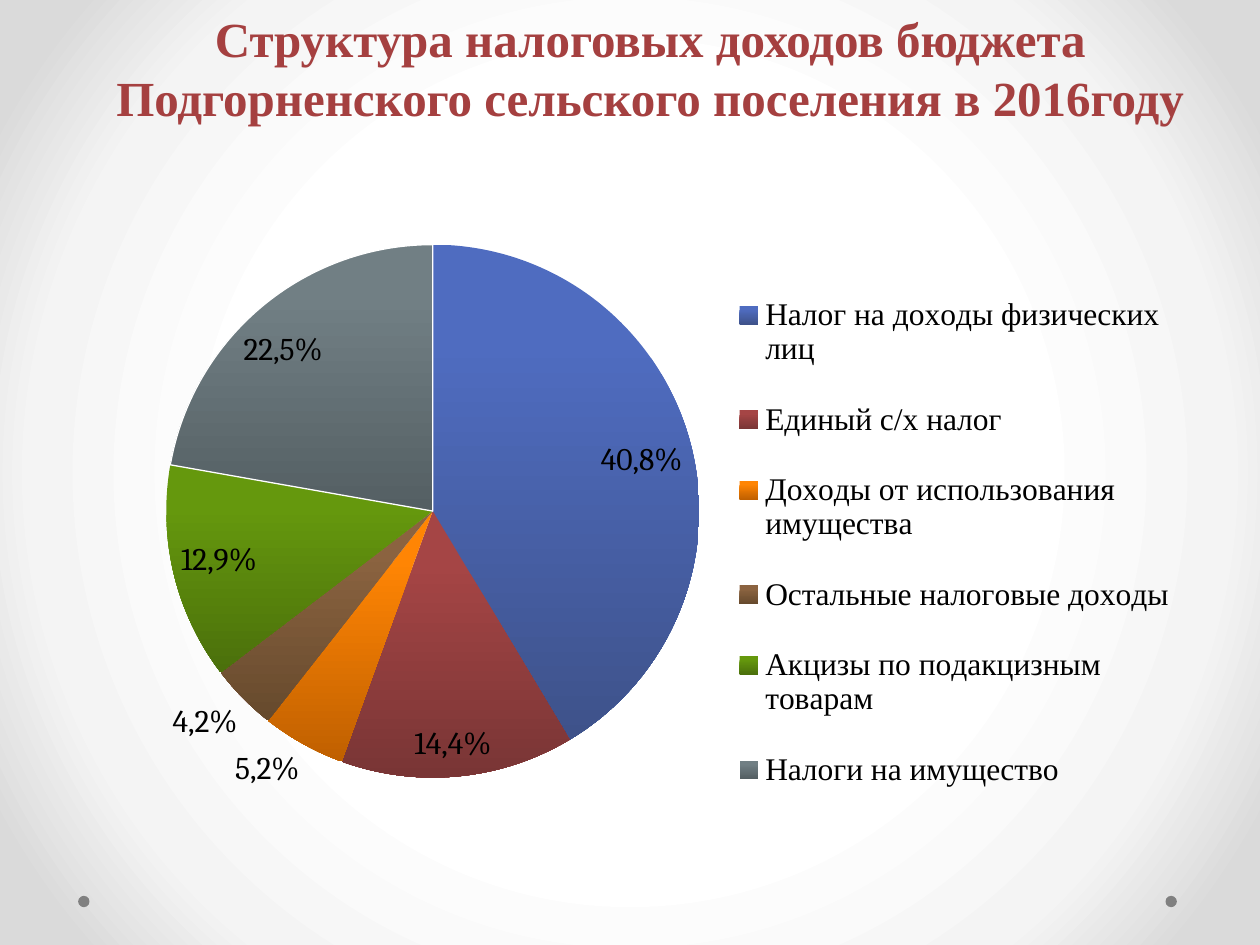
import pptx
import pptx.util
import pptx.oxml
import pptx.chart.data
import pptx.dml.color
import pptx.enum.chart
import pptx.enum.shapes
import pptx.enum.text

Inches, Pt = pptx.util.Inches, pptx.util.Pt
Place = pptx.enum.chart.XL_LABEL_POSITION
NS = "http://schemas.openxmlformats.org/"
COLORS = {"title": "A54040", "dot": "808080", "text": "000000", "edge": "FFFFFF"}
GLOW = {50: "FFFFFF", 76: "F4F4F4", 92: "DADADA"}
IN, OUT = Place.INSIDE_END, Place.OUTSIDE_END

# name, share, label, top colour, bottom colour, label place, label shift
SLICES = [
    ("Налог на доходы физических лиц", 41, "40,8%", "4F6CC0", "3E528A", IN, None),
    ("Единый с/х налог", 14, "14,4%", "A54545", "793535", IN, (0.03, -0.01)),
    ("Доходы от использования имущества", 5, "5,2%", "FF8504", "C06000", OUT, None),
    ("Остальные налоговые доходы", 4, "4,2%", "8B6340", "664A2D", OUT, None),
    ("Акцизы по подакцизным товарам", 13, "12,9%", "65980D", "4B700C", IN, (0, 0.01)),
    ("Налоги на имущество", 22, "22,5%", "717F84", "545F63", IN, (-0.02, 0.03)),
]


def rgb(code):
    return pptx.dml.color.RGBColor.from_string(code)


def layout(**parts):
    tags = "".join(f'<c:{tag} val="{val}"/>' for tag, val in parts.items())
    return pptx.oxml.parse_xml(f'<c:layout xmlns:c="{NS}drawingml/2006/chart">'
                               f'<c:manualLayout>{tags}</c:manualLayout></c:layout>')


deck = pptx.Presentation()
deck.slide_width, deck.slide_height = Inches(10), Inches(7.5)
slide = deck.slides.add_slide(deck.slide_layouts[5])

# Background: round glow
slide.background.fill.solid()
back = slide.element.xpath(".//p:bgPr")[0]
stops = "".join(f'<a:gs pos="{pos * 1000}"><a:srgbClr val="{code}"/></a:gs>'
                for pos, code in GLOW.items())
back.replace(back[0], pptx.oxml.parse_xml(
    f'<a:gradFill xmlns:a="{NS}drawingml/2006/main" rotWithShape="1"><a:gsLst>{stops}</a:gsLst>'
    '<a:path path="circle"><a:fillToRect l="50000" t="50000" r="50000" b="50000"/></a:path>'
    '</a:gradFill>'))

# Corner dots
for left in (9.25, 0.62):
    dot = slide.shapes.add_shape(pptx.enum.shapes.MSO_SHAPE.OVAL, Inches(left),
                                 Inches(7.11), Inches(0.09), Inches(0.09))
    dot.shadow.inherit = False
    dot.fill.solid()
    dot.fill.fore_color.rgb = rgb(COLORS["dot"])
    dot.line.fill.background()

# Pie chart
data = pptx.chart.data.CategoryChartData(number_format="0")
data.categories = [row[0] for row in SLICES]
data.add_series("Series 1", [row[1] for row in SLICES])
chart = slide.shapes.add_chart(pptx.enum.chart.XL_CHART_TYPE.PIE, Inches(0.51),
                               Inches(1.78), Inches(9), Inches(4.95), data).chart
chart.has_title = False
chart.font.size, chart.font.name = Pt(18), "Cambria"
chart.font.color.rgb = rgb(COLORS["text"])
plot = chart.plots[0]
plot.vary_by_categories = True
area = chart.element.xpath(".//c:plotArea")[0]
for old in area.xpath("./c:layout"):
    area.remove(old)
area.insert(0, layout(layoutTarget="inner", xMode="edge", yMode="edge",
                      x=0.09, y=0.03, w=0.47, h=0.86))

# Slices and their labels
for num, (name, share, text, top, low, place, shift) in enumerate(SLICES):
    point = plot.series[0].points[num]
    fill = point.format.fill
    fill.gradient()
    fill.gradient_angle = 270
    for stop, code, pos in zip(fill.gradient_stops, (top, low), (0.2, 1)):
        stop.color.rgb, stop.position = rgb(code), pos
    label = point.data_label
    run = label.text_frame.paragraphs[0].add_run()
    run.text = text
    run.font.size, run.font.name = Pt(18), "Cambria"
    run.font.color.rgb = rgb(COLORS["text"])
    label.position = place
    if shift:
        mark = chart.element.xpath(f".//c:dLbl/c:idx[@val='{num}']")[0]
        mark.addnext(layout(x=shift[0], y=shift[1]))
edge = point.format.line
edge.color.rgb, edge.width = rgb(COLORS["edge"]), Pt(0.75)

# Legend
chart.has_legend = True
legend = chart.legend
legend.position = pptx.enum.chart.XL_LEGEND_POSITION.RIGHT
legend.include_in_layout = False
legend.font.size, legend.font.name = Pt(18), "Times New Roman"
legend.font.color.rgb = rgb(COLORS["text"])
root = chart.element.xpath(".//c:legend")[0]
for old in root.xpath("./c:layout"):
    root.remove(old)
root.xpath("./c:legendPos")[0].addnext(
    layout(xMode="edge", yMode="edge", x=0.58, y=0.06, w=0.41, h=0.9))

# Title
title = slide.shapes.title
title.left, title.top, title.width, title.height = map(Inches, (0.67, 0.02, 8.98, 1.04))
frame = title.text_frame
frame.text = "Структура налоговых доходов бюджета Подгорненского сельского поселения в 2016году"
frame.word_wrap = True
frame.vertical_anchor = pptx.enum.text.MSO_ANCHOR.TOP
frame.paragraphs[0].alignment = pptx.enum.text.PP_ALIGN.CENTER
font = frame.paragraphs[0].runs[0].font
for key, val in {"size": Pt(28), "name": "Times New Roman", "bold": True}.items():
    setattr(font, key, val)
font.color.rgb = rgb(COLORS["title"])

deck.save("out.pptx")
